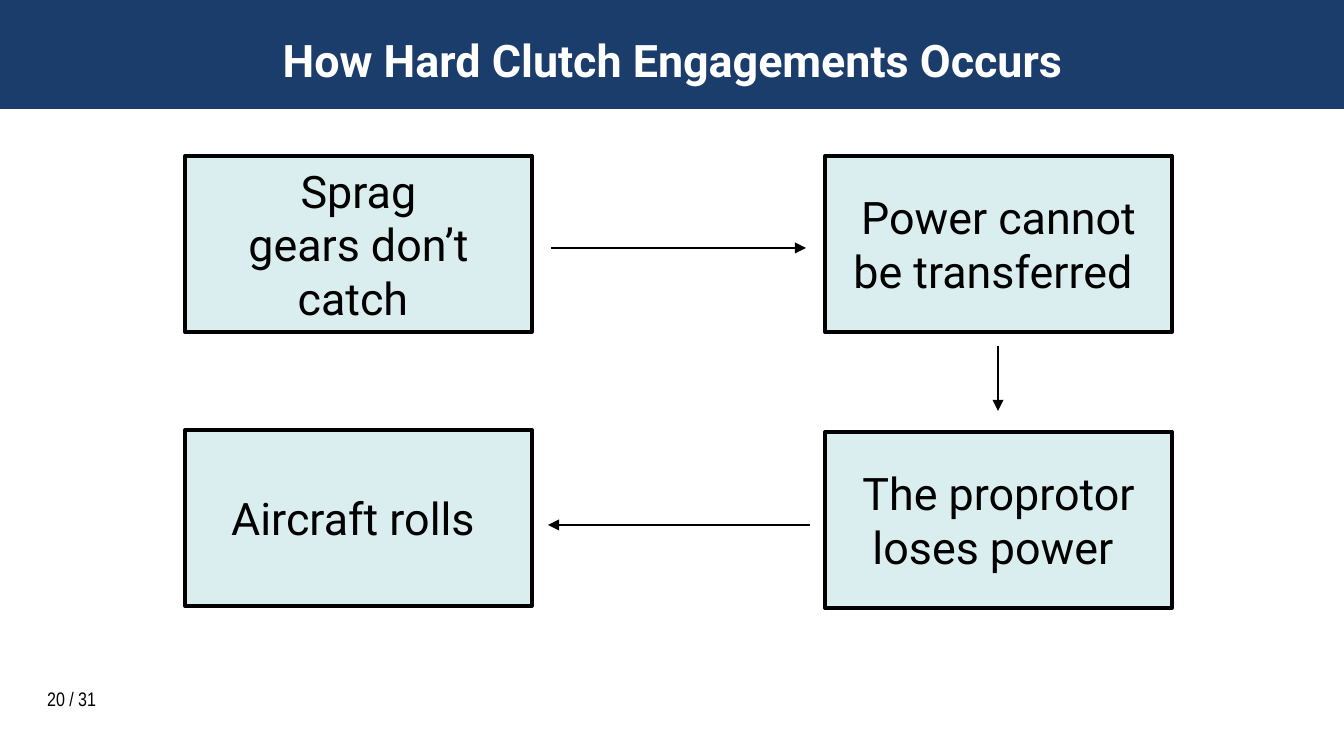
from lxml.etree import SubElement
from pptx import Presentation
from pptx.dml.color import RGBColor
from pptx.enum.shapes import MSO_CONNECTOR as Connector, MSO_SHAPE as Shape
from pptx.enum.text import MSO_ANCHOR as Anchor, PP_ALIGN as Align
from pptx.oxml.ns import qn
from pptx.util import Pt

EMU_PER_PX = 914400 / 134.4
NAVY = RGBColor(0x1B, 0x3D, 0x6C)
PALE_BLUE = RGBColor(0xDA, 0xED, 0xEF)
BLACK = RGBColor(0, 0, 0)
WHITE = RGBColor(0xFF, 0xFF, 0xFF)


def px(*lengths):
    return [round(length * EMU_PER_PX) for length in lengths]


def write_text(shape, text, font="Roboto", size=24, color=BLACK, bold=False,
               align=Align.CENTER, anchor=Anchor.MIDDLE):
    """Fill the shape with one paragraph per line of text."""
    frame = shape.text_frame
    frame.text = text
    frame.word_wrap = True
    frame.vertical_anchor = anchor
    for paragraph in frame.paragraphs:
        paragraph.alignment = align
        paragraph.font.name = font
        paragraph.font.size = Pt(size)
        paragraph.font.bold = bold
        paragraph.font.color.rgb = color


class FlowSlide:
    BOX_WIDTH, BOX_HEIGHT = 347, 176

    def __init__(self, presentation):
        self.slide = presentation.slides.add_slide(presentation.slide_layouts[5])

    def rectangle(self, left, top, width, height, fill):
        shape = self.slide.shapes.add_shape(
            Shape.RECTANGLE, *px(left, top, width, height))
        shape.shadow.inherit = False
        shape.fill.solid()
        shape.fill.fore_color.rgb = fill
        shape.line.fill.background()
        return shape

    def title_band(self, text):
        band = self.rectangle(0, 0, 1344, 109, NAVY)
        title = self.slide.shapes.title
        title.left, title.top, title.width, title.height = px(34, 22, 1277, 75)
        write_text(title, text, color=WHITE, bold=True)
        title._element.addprevious(band._element)

    def step(self, left, top, text):
        box = self.rectangle(left, top, self.BOX_WIDTH, self.BOX_HEIGHT, PALE_BLUE)
        box.line.color.rgb = BLACK
        box.line.width = Pt(2)
        write_text(box, text)

    def arrow(self, *ends):
        line = self.slide.shapes.add_connector(Connector.STRAIGHT, *px(*ends))
        line.line.color.rgb = BLACK
        line.line.width = Pt(0.75)
        SubElement(line.line._get_or_add_ln(), qn("a:tailEnd"), type="triangle")
        SubElement(line._element.spPr, qn("a:effectLst"))

    def page_number(self, text):
        box = self.slide.shapes.add_textbox(*px(34, 680, 134, 26))
        write_text(box, text, font="Arial Narrow", size=10.5,
                   align=Align.LEFT, anchor=Anchor.TOP)


def main():
    presentation = Presentation()
    presentation.slide_width, presentation.slide_height = px(1344, 756)

    flow = FlowSlide(presentation)
    flow.title_band("How Hard Clutch Engagements Occurs")
    flow.page_number("20 / 31")

    steps = [
        (185, 156, " Sprag \ngears don’t catch "),
        (825, 156, "Power cannot be transferred "),
        (825, 432, "The proprotor loses power "),
        (185, 430, "Aircraft rolls "),
    ]
    for left, top, text in steps:
        flow.step(left, top, text)

    for ends in [(551, 248, 806, 248), (998, 346, 998, 411), (810, 525, 548, 525)]:
        flow.arrow(*ends)

    presentation.save("out.pptx")


if __name__ == "__main__":
    main()
